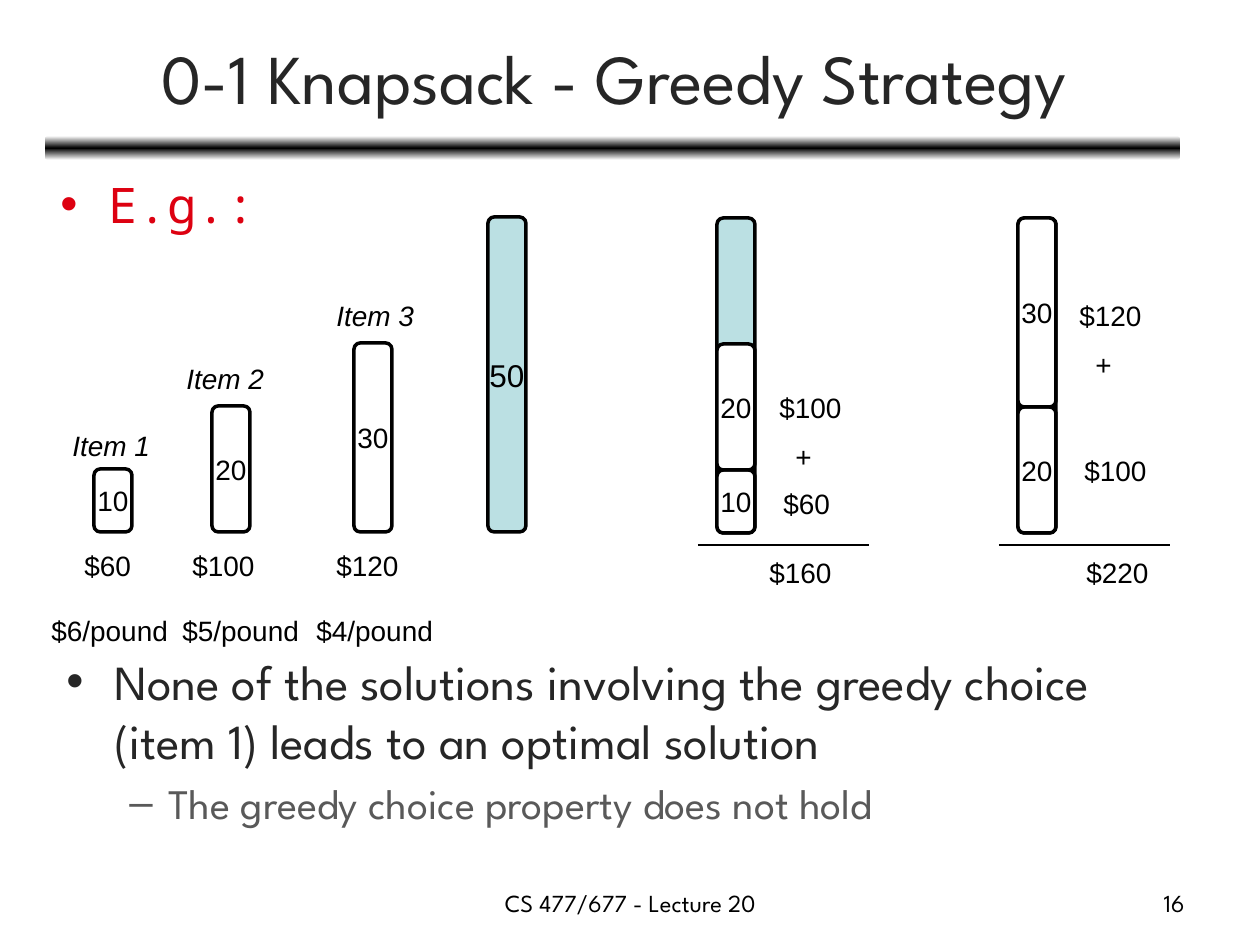
from copy import deepcopy

from lxml.etree import SubElement
from pptx import Presentation
from pptx.dml.color import RGBColor
from pptx.enum.shapes import MSO_CONNECTOR, MSO_SHAPE
from pptx.enum.text import MSO_ANCHOR, MSO_AUTO_SIZE, PP_ALIGN
from pptx.oxml.ns import qn
from pptx.util import Emu, Pt

EMU_PER_PX = 914400 / 126
SANS, HEADING, MONO = "Arial", "League Spartan", "Noto Sans Mono"
BLACK, WHITE, DARK, GRAY = "000000", "FFFFFF", "262626", "595959"
RED, AQUA = "DD0111", "BBE0E3"
CAPACITY, BAR_WIDTH, PX_PER_TEN_POUNDS = 50, 38, 63
LABEL_HEIGHT = 47


def px(length):
    return Emu(round(length * EMU_PER_PX))


def color(value):
    return RGBColor.from_string(value)


def add_run(paragraph, text, size, font=SANS, fill=BLACK, italic=None):
    run = paragraph.add_run()
    run.text = text
    run.font.size = Pt(size)
    run.font.name = font
    run.font.italic = italic
    run.font.color.rgb = color(fill)


def indent(paragraph, left, first=0):
    properties = paragraph._p.get_or_add_pPr()
    properties.set("marL", str(px(left)))
    properties.set("indent", str(px(first)))
    return properties


def add_bullet(paragraph, text, size, bullet, left, first, font, fill):
    paragraph.space_before = Pt(size / 5)
    properties = indent(paragraph, left, first)
    SubElement(properties, qn("a:buFont"), typeface=SANS)
    SubElement(properties, qn("a:buChar"), char=bullet)
    add_run(paragraph, text, size, font, fill)


def add_box(shapes, left, top, width, height, wrap=True):
    frame = shapes.add_textbox(px(left), px(top), px(width), px(height)).text_frame
    frame.word_wrap = wrap
    return frame


def add_line_of_text(shapes, box, text, size, fill, align):
    """One aligned line in the heading font."""
    frame = add_box(shapes, *box)
    frame.paragraphs[0].alignment = align
    add_run(frame.paragraphs[0], text, size, HEADING, fill)
    return frame


def add_label(shapes, left, top, width, text, italic=None):
    frame = add_box(shapes, left, top, width, LABEL_HEIGHT, wrap=False)
    frame.auto_size = MSO_AUTO_SIZE.SHAPE_TO_FIT_TEXT
    add_run(frame.paragraphs[0], text, 16, italic=italic)
    return frame


def add_price_plus(shapes, left, top, price):
    """A price with a plus sign below it."""
    frame = add_label(shapes, left, top, 87, price)
    plus = frame.add_paragraph()
    plus.space_before = Pt(9)
    indent(plus, 16)
    add_run(plus, "+", 16)


def add_bar(shapes, left, bottom, pounds, fill=WHITE, text="", size=16):
    height = pounds * PX_PER_TEN_POUNDS // 10
    bar = shapes.add_shape(MSO_SHAPE.ROUNDED_RECTANGLE, px(left),
                           px(bottom - height), px(BAR_WIDTH), px(height))
    bar.shadow.inherit = False
    bar.fill.solid()
    bar.fill.fore_color.rgb = color(fill)
    bar.line.color.rgb = color(BLACK)
    bar.line.width = Pt(2)
    frame = bar.text_frame
    frame.word_wrap = False
    frame.vertical_anchor = MSO_ANCHOR.MIDDLE
    frame.paragraphs[0].alignment = PP_ALIGN.CENTER
    if text:
        add_run(frame.paragraphs[0], text, size)
    return bottom - height


def add_sum_line(shapes, left, top, width):
    line = shapes.add_connector(MSO_CONNECTOR.STRAIGHT, px(left), px(top),
                                px(left + width), px(top))
    line.line.color.rgb = color(BLACK)
    line.line.width = Pt(0.75)
    SubElement(line._element.spPr, qn("a:effectLst"))


def add_title_rule(shapes):
    rule = shapes.add_shape(MSO_SHAPE.ROUNDED_RECTANGLE,
                            px(45), px(136), px(1135), px(24))
    rule.shadow.inherit = False
    rule.line.fill.background()
    rule.fill.gradient()
    rule.fill.gradient_angle = 90
    stops = rule._element.spPr.find(".//" + qn("a:gsLst"))
    stops.append(deepcopy(stops[-1]))
    for stop, position, fill in zip(rule.fill.gradient_stops, (0, 0.5, 1),
                                    (WHITE, BLACK, WHITE)):
        stop.position = position
        stop.color.rgb = color(fill)


def add_items(shapes):
    # bar left, pounds, name place, price place and width, rate left
    items = [
        (94, 10, (60, 422), "$60", 72, 72, 39),
        (212, 20, (174, 355), "$100", 180, 87, 170),
        (354, 30, (324, 292), "$120", 324, 87, 304),
    ]
    for number, item in enumerate(items, 1):
        left, pounds, name_at, price, price_left, price_width, rate_left = item
        add_bar(shapes, left, 532, pounds, text=str(pounds))
        add_label(shapes, *name_at, 103, f"Item {number}", italic=True)
        add_label(shapes, price_left, 542, price_width, price)
        add_label(shapes, rate_left, 607, 142, f"${7 - number}/pound")
    add_bar(shapes, 488, 532, CAPACITY, AQUA, str(CAPACITY), 18)


def add_solution(shapes, left, weights, upper, lower, total):
    """A filled knapsack with its prices and their sum."""
    group = shapes.add_group_shape().shapes
    bottom = 533
    add_bar(group, left, bottom, CAPACITY, AQUA)
    for pounds in weights:
        bottom = add_bar(group, left, bottom, pounds, text=str(pounds))
    add_price_plus(group, *upper)
    add_label(group, *lower)
    add_sum_line(group, left - 19, 545, 171)
    add_label(group, *total)


def main():
    presentation = Presentation()
    presentation.slide_width, presentation.slide_height = px(1260), px(945)
    slide = presentation.slides.add_slide(presentation.slide_layouts[6])
    shapes = slide.shapes

    # Title and first bullet
    add_title_rule(shapes)
    title = add_line_of_text(shapes, (47, 14, 1134, 125),
                             "0-1 Knapsack - Greedy Strategy", 40, DARK,
                             PP_ALIGN.CENTER)
    title.vertical_anchor = MSO_ANCHOR.MIDDLE
    example = add_box(shapes, 48, 168, 1134, 149)
    add_bullet(example.paragraphs[0], "E.g.:", 28, "•", 48, -48, MONO, RED)

    # Items and the two ways to fill the knapsack
    add_items(shapes)
    add_solution(shapes, 717, (10, 20), (767, 384, "$100"),
                 (771, 480, 72, "$60"), (757, 549, 87, "$160"))
    add_solution(shapes, 1018, (20, 30), (1067, 292, "$120"),
                 (1072, 447, 87, "$100"), (1074, 549, 87, "$220"))

    # Conclusion
    conclusion = add_box(shapes, 54, 645, 1134, 258)
    add_bullet(conclusion.paragraphs[0],
               "None of the solutions involving the greedy choice (item 1) "
               "leads to an optimal solution",
               28, "•", 48, -48, HEADING, DARK)
    detail = conclusion.add_paragraph()
    detail.level = 1
    add_bullet(detail, "The greedy choice property does not hold",
               24, "–", 102, -39, HEADING, GRAY)

    # Footer
    add_line_of_text(shapes, (431, 882, 399, 44), "CS 477/677 - Lecture 20",
                     14, BLACK, PP_ALIGN.CENTER)
    add_line_of_text(shapes, (903, 882, 294, 44), "16", 14, BLACK,
                     PP_ALIGN.RIGHT)
    presentation.save("out.pptx")


if __name__ == "__main__":
    main()
